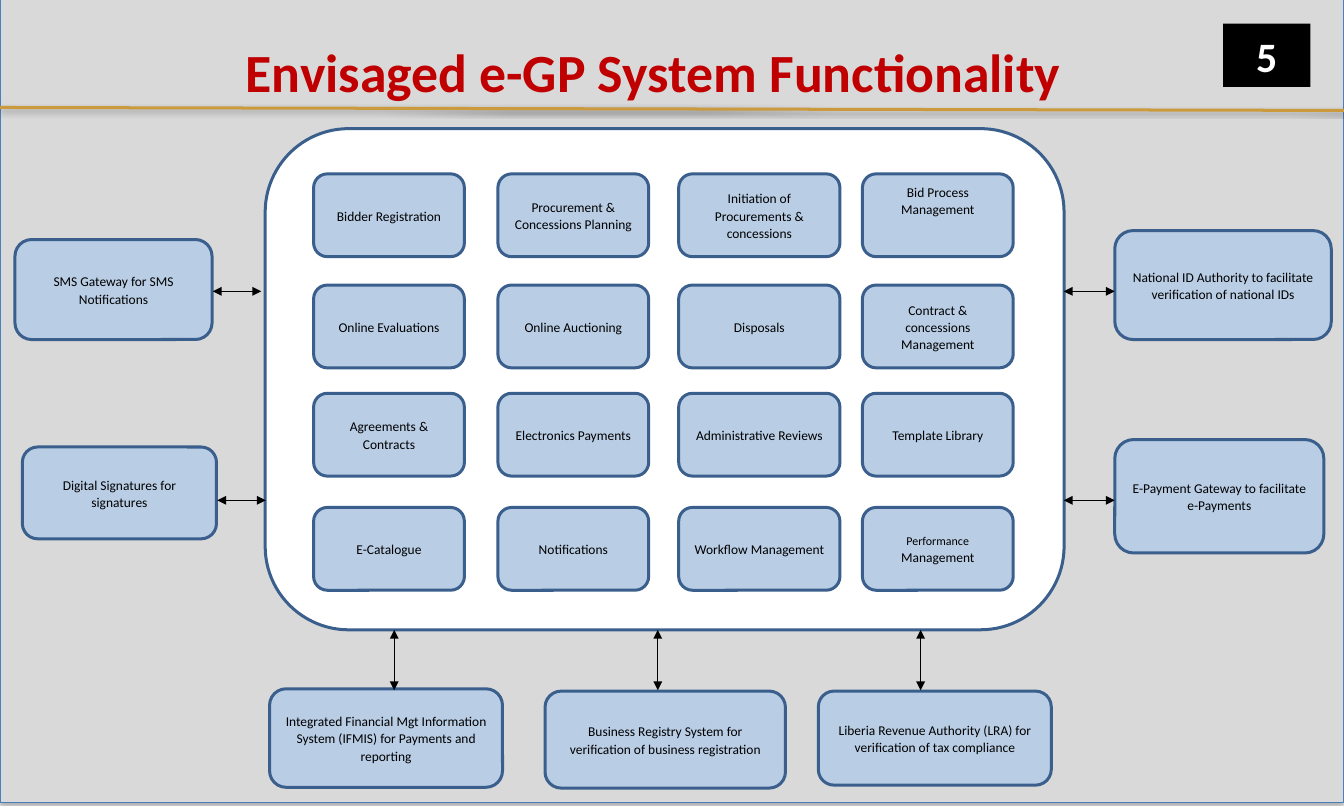
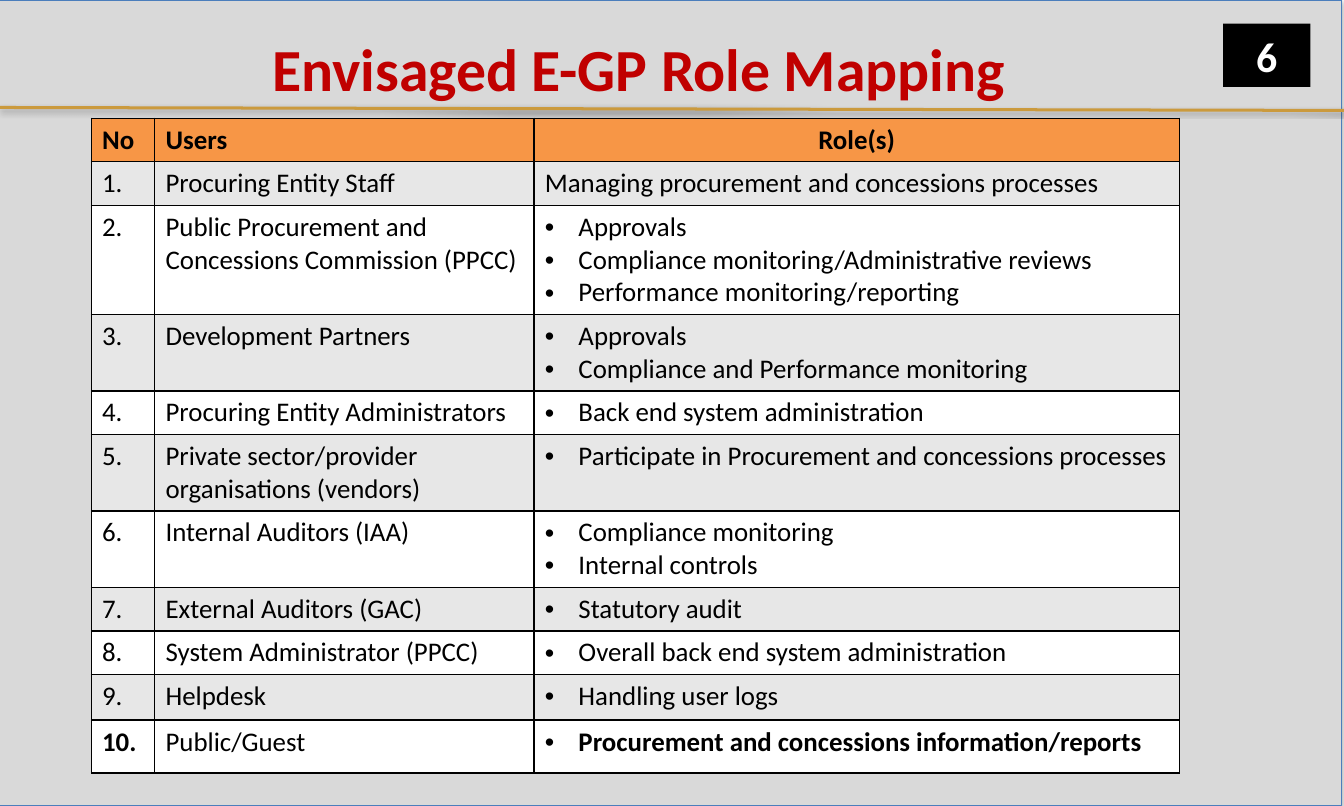
from dataclasses import dataclass
from typing import NamedTuple, Optional

from lxml import etree
from pptx import Presentation, util as u
from pptx.dml import color
from pptx.enum import shapes, text
from pptx.oxml import ns

FONT = "Calibri"
BLACK, WHITE, RED, GOLD = "000000", "FFFFFF", "C00000", "CB9A3D"
GREY, EDGE, PALE, NAVY = "D9D9D9", "4B7EBC", "B9CDE5", "3A5F8C"
HEAD, BAND = "F79646", "E7E7E7"
RECT = shapes.MSO_SHAPE.RECTANGLE
ROUND = shapes.MSO_SHAPE.ROUNDED_RECTANGLE
MID = text.PP_ALIGN.CENTER


class Area(NamedTuple):
    x: float
    y: float
    w: float
    h: float


class Span(NamedTuple):
    x1: float
    y1: float
    x2: float
    y2: float


class Bit(NamedTuple):
    words: str
    size: float = 9
    hue: str = BLACK
    bold: bool = False


@dataclass(frozen=True)
class Node:
    area: Area
    bits: tuple[Bit, ...]
    lift: float = 0


@dataclass(frozen=True)
class Role:
    user: str
    tasks: tuple[str, ...]
    high: float = 29.2
    dots: bool = True
    bold: bool = False


@dataclass(frozen=True)
class Page:
    title: str
    size: float
    area: Area
    frame: Area
    num: str


FIRST = Page("Envisaged e-GP System Functionality", 36, Area(78.5, 21.6, 718, 52),
             Area(0, -2, 900, 540), "5")
SECOND = Page("Envisaged E-GP Role Mapping", 40, Area(22.5, 19.5, 810, 52),
              Area(-1.5, 0, 900, 540), "6")

COLS = ((210, 101), (333.4, 101), (454.5, 108), (577.5, 101))
ROWS = (116.5, 191, 263.5, 340)
GRID = (
    ("Bidder Registration", "Procurement & Concessions Planning",
     "Initiation of Procurements & concessions", "Bid Process Management"),
    ("Online Evaluations", "Online Auctioning", "Disposals",
     "Contract & concessions Management"),
    ("Agreements & Contracts", "Electronics Payments",
     "Administrative Reviews", "Template Library"),
    ("E-Catalogue", "Notifications", "Workflow Management",
     "Performance Management"),
)
LIFTS = {"Bid Process Management": 20}
MIXED = {"Performance Management": (Bit("Performance ", 8), Bit("Management"))}

OUTER = (
    (Area(10, 160.5, 132, 67), "SMS Gateway for SMS Notifications"),
    (Area(15, 299.5, 130, 61.5), "Digital Signatures for signatures"),
    (Area(746.5, 154.5, 145, 73), "National ID Authority to facilitate verification of national IDs"),
    (Area(746.5, 294.5, 140, 76), "E-Payment Gateway to facilitate e-Payments"),
    (Area(180.5, 461.5, 156, 66),
     "Integrated Financial Mgt Information System (IFMIS) for Payments and reporting"),
    (Area(365, 463, 161, 65), "Business Registry System for verification of business registration"),
    (Area(548, 463, 156, 63), "Liberia Revenue Authority (LRA) for verification of tax compliance"),
)
LINKS = (
    Span(142.5, 195.2, 175, 195.2), Span(145.5, 335.2, 178, 335.2),
    *(Span(712.3, y, 746.5, y) for y in (195.2, 335.2)),
    *(Span(x, 422, x, 462.5) for x in (264, 440.5, 616.5)),
)

WIDTHS = (42.5, 254, 432)
ROLES = (
    Role("Procuring Entity Staff", ("Managing procurement and concessions processes",), dots=False),
    Role("Public Procurement and Concessions Commission (PPCC)",
         ("Approvals", "Compliance monitoring/Administrative reviews",
          "Performance monitoring/reporting"), 73.2),
    Role("Development Partners", ("Approvals", "Compliance and Performance monitoring"), 51.2),
    Role("Procuring Entity Administrators", ("Back end system administration",)),
    Role("Private sector/provider organisations (vendors)",
         ("Participate in Procurement and concessions processes",), 51.2),
    Role("Internal Auditors (IAA)", ("Compliance monitoring", "Internal controls"), 51.2),
    Role("External Auditors (GAC)", ("Statutory audit",)),
    Role("System Administrator (PPCC)", ("Overall back end system administration",)),
    Role("Helpdesk", ("Handling user logs",), 30.5),
    Role("Public/Guest", ("Procurement and concessions information/reports",), 35.5, bold=True),
)


def rgb(code: str) -> color.RGBColor:
    return color.RGBColor.from_string(code)


def add_tag(host, name: str, **attrs: str):
    return etree.SubElement(host, ns.qn(name), attrs)


def pts(values: tuple) -> list:
    return [u.Pt(v) for v in values]


def shade(item, alpha: Optional[int] = None, drop: float = 1.8) -> None:
    props = item.element.spPr
    tag = props.find(ns.qn("a:effectLst"))
    if tag is None:
        tag = add_tag(props, "a:effectLst")
    if alpha:
        cast = add_tag(tag, "a:outerShdw", blurRad=str(u.Pt(3.1)), dist=str(u.Pt(drop)),
                       dir="5400000", rotWithShape="0")
        tint = add_tag(cast, "a:srgbClr", val=BLACK)
        add_tag(tint, "a:alpha", val=str(alpha * 1000))


def write(para, bits: tuple[Bit, ...], align=None) -> None:
    para.alignment = align
    for bit in bits:
        run = para.add_run()
        run.text = bit.words
        run.font.name = FONT
        run.font.size = u.Pt(bit.size)
        run.font.bold = bit.bold
        run.font.color.rgb = rgb(bit.hue)


def fill_text(item, bits: tuple[Bit, ...]):
    frame = item.text_frame
    frame.word_wrap = True
    frame.vertical_anchor = text.MSO_ANCHOR.MIDDLE
    write(frame.paragraphs[0], bits, MID)
    return frame


def add_box(slide, kind, area: Area, fill: str, edge: Optional[str] = None, thick: float = 2):
    box = slide.shapes.add_shape(kind, *pts(area))
    box.shadow.inherit = False
    box.fill.solid()
    box.fill.fore_color.rgb = rgb(fill)
    if edge:
        box.line.color.rgb = rgb(edge)
        box.line.width = u.Pt(thick)
    else:
        box.line.fill.background()
    return box


def add_line(slide, span: Span, hue: str, thick: float):
    line = slide.shapes.add_connector(shapes.MSO_CONNECTOR.STRAIGHT, *pts(span))
    line.line.color.rgb = rgb(hue)
    line.line.width = u.Pt(thick)
    return line


def add_link(slide, span: Span) -> None:
    link = add_line(slide, span, BLACK, 0.75)
    shade(link)
    stroke = link.element.spPr.find(ns.qn("a:ln"))
    for end in ("a:headEnd", "a:tailEnd"):
        add_tag(stroke, end, type="triangle")


def add_node(slide, node: Node) -> None:
    box = add_box(slide, ROUND, node.area, PALE, NAVY)
    frame = fill_text(box, node.bits)
    frame.margin_bottom = u.Pt(3.6 + node.lift)
    para = frame.paragraphs[0]
    para.line_spacing = 1.07
    para.space_after = u.Pt(8)


def add_page(deck, page: Page):
    slide = deck.slides.add_slide(deck.slide_layouts[6])
    shade(add_box(slide, RECT, page.frame, GREY, EDGE, 0.75), 35)
    shade(add_line(slide, Span(0, 72, 900, 74), GOLD, 2), 38, 1.6)
    title = slide.shapes.add_textbox(*pts(page.area))
    fill_text(title, (Bit(page.title, page.size, RED, True),))
    badge = add_box(slide, RECT, Area(819, 15.8, 58.5, 42.5), BLACK)
    fill_text(badge, (Bit(page.num, 28, WHITE, True),))
    return slide


def draw_map(slide) -> None:
    add_box(slide, ROUND, Area(177.6, 86.2, 535, 335.8), WHITE, NAVY)
    for y, names in zip(ROWS, GRID):
        for (x, wide), name in zip(COLS, names):
            bits = MIXED.get(name, (Bit(name),))
            add_node(slide, Node(Area(x, y, wide, 55.5), bits, LIFTS.get(name, 0)))
    for area, name in OUTER:
        add_node(slide, Node(area, (Bit(name),)))
    for span in LINKS:
        add_link(slide, span)


def set_cell(cell, lines: tuple[str, ...], fill: str, bold: bool = False,
             dots: bool = False, align=None) -> None:
    props = cell._tc.get_or_add_tcPr()
    for side in "LRTB":
        edge = add_tag(props, f"a:ln{side}", w=str(u.Pt(1)))
        add_tag(add_tag(edge, "a:solidFill"), "a:srgbClr", val=BLACK)
    cell.fill.solid()
    cell.fill.fore_color.rgb = rgb(fill)
    frame = cell.text_frame
    for i, line in enumerate(lines):
        para = frame.add_paragraph() if i else frame.paragraphs[0]
        write(para, (Bit(line, 18, BLACK, bold),), align)
        if dots:
            style = para._p.get_or_add_pPr()
            style.set("marL", str(u.Pt(22.5)))
            style.set("indent", str(-u.Pt(22.5)))
            add_tag(style, "a:buFont", typeface="Arial")
            add_tag(style, "a:buChar", char="•")


def draw_roles(slide) -> None:
    highs = (29.2, *(role.high for role in ROLES))
    area = Area(61.2, 79.2, sum(WIDTHS), sum(highs))
    table = slide.shapes.add_table(len(highs), len(WIDTHS), *pts(area)).table
    table.first_row = table.horz_banding = False
    for col, wide in zip(table.columns, WIDTHS):
        col.width = u.Pt(wide)
    for row, high in zip(table.rows, highs):
        row.height = u.Pt(high)
    for i, (name, align) in enumerate((("No", None), ("Users", None), ("Role(s)", MID))):
        set_cell(table.cell(0, i), (name,), HEAD, True, align=align)
    for i, role in enumerate(ROLES, 1):
        fill = BAND if i % 2 else WHITE
        set_cell(table.cell(i, 0), (f"{i}.",), fill, role.bold)
        set_cell(table.cell(i, 1), (role.user,), fill)
        set_cell(table.cell(i, 2), role.tasks, fill, role.bold, role.dots)


def main() -> None:
    deck = Presentation()
    deck.slide_width, deck.slide_height = u.Pt(900), u.Pt(540)
    draw_map(add_page(deck, FIRST))
    draw_roles(add_page(deck, SECOND))
    deck.save("out.pptx")


if __name__ == "__main__":
    main()
